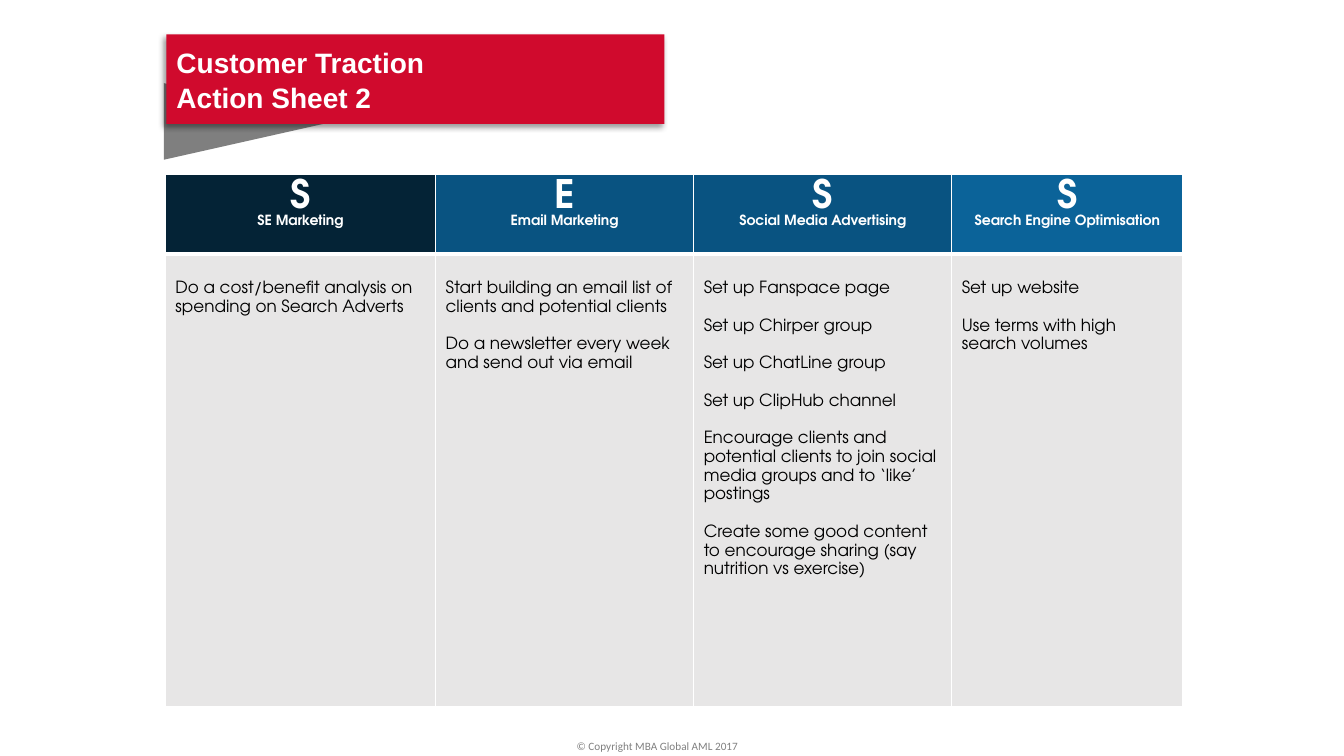
"""Build the Customer Traction action sheet slide."""
from dataclasses import dataclass

from lxml import etree
from pptx import Presentation
from pptx import util as u
from pptx.dml.color import RGBColor
from pptx.enum import shapes, text
from pptx.oxml import parse_xml
from pptx.oxml.ns import nsdecls, qn

PX = 9144


@dataclass(frozen=True)
class Theme:
    red: str = "D00A2D"
    grey: str = "7F7F7F"
    panel: str = "E7E6E6"
    muted: str = "808080"
    white: str = "FFFFFF"
    black: str = "000000"
    display: str = "TeX Gyre Adventor"
    heading: str = "Arial"
    small: str = "Calibri"
    letter_pt: int = 28
    title_pt: int = 20
    body_pt: int = 12
    label_pt: int = 10
    footer_pt: int = 8


@dataclass(frozen=True)
class Channel:
    letter: str
    label: str
    fill: str
    width: int
    actions: tuple[str, ...]


T = Theme()
ROWS = (79, 449)
CHANNELS = (
    Channel("S", "SE Marketing", "042336", 268, (
        "Do a cost/benefit analysis on spending on Search Adverts",)),
    Channel("E", "Email Marketing", "095381", 256, (
        "Start building an email list of clients and potential clients",
        "Do a newsletter every week and send out via email")),
    Channel("S", "Social Media Advertising", "095381", 256, (
        "Set up Fanspace page",
        "Set up Chirper group",
        "Set up ChatLine group",
        "Set up ClipHub channel",
        "Encourage clients and potential clients to join social media groups and to ‘like’ postings",
        "Create some good content to encourage sharing (say nutrition vs exercise)")),
    Channel("S", "Search Engine Optimisation", "0B6399", 229, (
        "Set up website",
        "Use terms with high search volumes")),
)


def px(n: int) -> u.Emu:
    """Turn px into EMU."""
    return u.Emu(n * PX)


def write(tf, content: str, *, size: int, font: str, color: str, bold: bool = False,
          align=text.PP_ALIGN.LEFT, spacing: float = 1.0, before: float = 0,
          first: bool = False) -> None:
    """Write one formatted paragraph into a text frame."""
    p = tf.paragraphs[0] if first else tf.add_paragraph()
    p.alignment = align
    p.line_spacing = spacing
    p.space_before = u.Pt(0 if first else before)
    r = p.add_run()
    r.text = content
    r.font.size = u.Pt(size)
    r.font.name = font
    r.font.bold = bold
    r.font.color.rgb = RGBColor.from_string(color)


def paint(obj, color: str) -> None:
    """Give a shape or cell a solid fill."""
    obj.fill.solid()
    obj.fill.fore_color.rgb = RGBColor.from_string(color)


def set_borders(cell, **widths: float) -> None:
    """Draw white cell borders with widths in points."""
    pr = cell._tc.get_or_add_tcPr()
    for i, (side, width) in enumerate(widths.items()):
        ln = etree.Element(qn(f"a:ln{side}"), w=str(u.Pt(width)))
        fill = etree.SubElement(ln, qn("a:solidFill"))
        etree.SubElement(fill, qn("a:srgbClr"), val=T.white)
        pr.insert(i, ln)


def add_channels(s) -> None:
    """Add the table of marketing channels."""
    width = sum(c.width for c in CHANNELS)
    table = s.shapes.add_table(len(ROWS), len(CHANNELS), px(164), px(173),
                               px(width), px(sum(ROWS))).table
    table.horz_banding = False
    for row, height in zip(table.rows, ROWS):
        row.height = px(height)
    for i, c in enumerate(CHANNELS):
        table.columns[i].width = px(c.width)
        head, body = table.cell(0, i), table.cell(1, i)
        paint(head, c.fill)
        paint(body, T.panel)
        set_borders(head, L=1, R=1, T=1, B=3)
        set_borders(body, L=1, R=1, T=3, B=1)
        for content, size in ((c.letter, T.letter_pt), (c.label, T.label_pt)):
            write(head.text_frame, content, size=size, font=T.display, color=T.white,
                  bold=True, align=text.PP_ALIGN.CENTER, first=content == c.letter)
        body.margin_top = px(24)
        for j, action in enumerate(c.actions):
            write(body.text_frame, action, size=T.body_pt, font=T.display, color=T.black,
                  spacing=1.2, before=13.4, first=j == 0)


def add_banner(s) -> None:
    """Add the folded ribbon and the title on it."""
    fold = s.shapes.add_shape(shapes.MSO_SHAPE.FLOWCHART_EXTRACT,
                              px(209), px(36), px(76), px(169))
    fold.rotation = 90
    fold.shadow.inherit = False
    fold.line.fill.background()
    paint(fold, T.grey)

    title = s.shapes.title
    title.left, title.top, title.width, title.height = map(px, (165, 34, 494, 89))
    paint(title, T.red)
    title._element.spPr.append(parse_xml(
        f'<a:effectLst {nsdecls("a")}><a:outerShdw blurRad="{u.Pt(4)}" dist="{u.Pt(3)}" '
        f'dir="8100000" rotWithShape="0"><a:srgbClr val="{T.black}"><a:alpha val="40000"/>'
        '</a:srgbClr></a:outerShdw></a:effectLst>'))
    tf = title.text_frame
    tf.word_wrap = True
    tf.auto_size = text.MSO_AUTO_SIZE.NONE
    tf.vertical_anchor = text.MSO_ANCHOR.MIDDLE
    for i, line in enumerate(("Customer Traction", "Action Sheet 2")):
        write(tf, line, size=T.title_pt, font=T.heading, color=T.white, bold=True,
              spacing=1.05, first=i == 0)
    title._element.getparent().append(title._element)


def add_footer(s) -> None:
    """Add the copyright line."""
    tf = s.shapes.add_textbox(px(562), px(729), px(210), px(24)).text_frame
    tf.word_wrap = False
    tf.auto_size = text.MSO_AUTO_SIZE.SHAPE_TO_FIT_TEXT
    write(tf, "© Copyright MBA Global AML 2017", size=T.footer_pt, font=T.small,
          color=T.muted, first=True)


def main() -> None:
    """Build and save the slide."""
    prs = Presentation()
    prs.slide_width, prs.slide_height = px(1333), px(750)
    s = prs.slides.add_slide(prs.slide_layouts[5])
    add_channels(s)
    add_banner(s)
    add_footer(s)
    prs.save("out.pptx")


if __name__ == "__main__":
    main()
